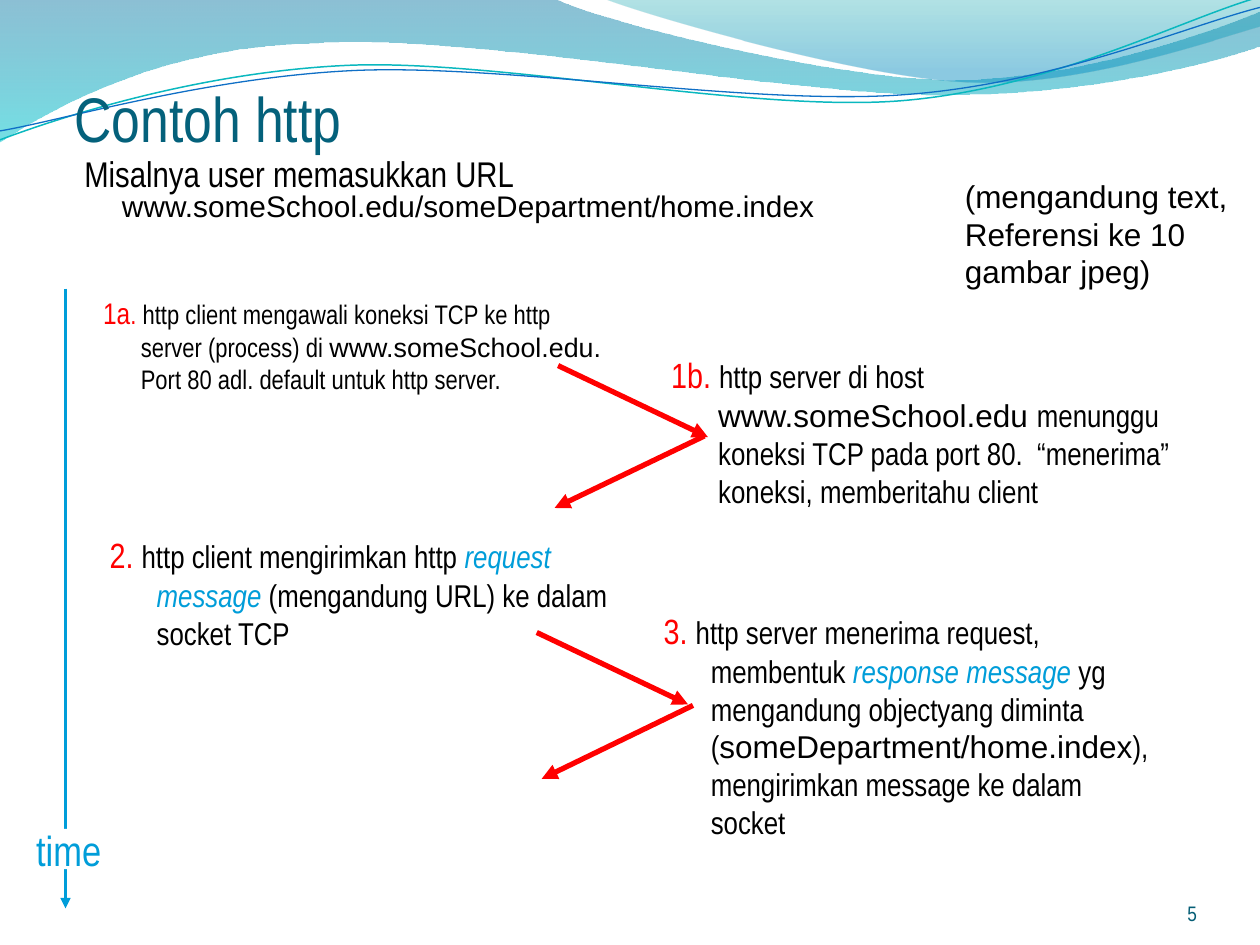
from lxml.etree import SubElement
from pptx import Presentation
from pptx.dml.color import RGBColor
from pptx.enum.shapes import MSO_CONNECTOR, MSO_SHAPE
from pptx.enum.text import MSO_ANCHOR as Anchor, MSO_AUTO_SIZE as AutoSize, PP_ALIGN as Align
from pptx.oxml.ns import qn
from pptx.util import Cm, Pt

NARROW, WIDE = "Arial Narrow", "Arial"
BLACK, RED, BLUE = "000000", "FF0000", "009DD9"
color = RGBColor.from_string

presentation = Presentation()
presentation.slide_width, presentation.slide_height = Cm(25.4), Cm(19.05)
slide = presentation.slides.add_slide(presentation.slide_layouts[6])


def add_text(paragraphs, box, size=18, fill=BLACK, font=NARROW, hanging=0, before=0,
             line=None, align=Align.LEFT, anchor=Anchor.TOP, margins=None, wrap=True):
    """Each paragraph is a list of (text, overrides) runs."""
    frame = slide.shapes.add_textbox(*map(Cm, box)).text_frame
    frame.word_wrap = wrap
    frame.auto_size = AutoSize.NONE if wrap else AutoSize.SHAPE_TO_FIT_TEXT
    frame.vertical_anchor = anchor
    if margins:
        (frame.margin_left, frame.margin_top,
         frame.margin_right, frame.margin_bottom) = map(Cm, margins)
    for index, runs in enumerate(paragraphs):
        paragraph = frame.add_paragraph() if index else frame.paragraphs[0]
        paragraph.alignment = align
        paragraph.space_before = Pt(before)
        paragraph.line_spacing = line
        if hanging:
            properties = paragraph._p.get_or_add_pPr()
            properties.set("marL", str(Cm(hanging)))
            properties.set("indent", str(-Cm(hanging)))
        for text, overrides in runs:
            style = {"size": size, "fill": fill, "font": font, "italic": False} | overrides
            run = paragraph.add_run()
            run.text = text
            run.font.size = Pt(style["size"])
            run.font.name = style["font"]
            run.font.italic = style["italic"]
            run.font.color.rgb = color(style["fill"])


def add_curve(start, segments, closed):
    """A segment is an end point, or two control points and an end point."""
    points = [(Cm(x), Cm(y)) for segment in segments
              for x, y in zip(segment[::2], segment[1::2])]
    builder = slide.shapes.build_freeform(*map(Cm, start))
    builder.add_line_segments(points, close=closed)
    shape = builder.convert_to_shape()
    shape.shadow.inherit = False
    # Join each three line points of a curve into one Bezier segment
    lines = iter(list(shape._element.iter(qn("a:lnTo"))))
    for segment in segments:
        first = next(lines)
        if len(segment) == 6:
            first.tag_name = None
            bezier = SubElement(first.getparent(), qn("a:cubicBezTo"))
            first.addprevious(bezier)
            for part in (first, next(lines), next(lines)):
                bezier.append(part[0])
                part.getparent().remove(part)
    return shape


# Header waves: start, segments, gradient stops (position, colour, opacity %)
waves = [
    ((0, 0), [(11.18, -0.03), (12.09, 0.43, 16.87, 1.6, 19.25, 1.6),
              (21.67, 1.6, 24.33, 0.66, 25.4, 0.23), (25.43, 0.91),
              (24.97, 1.12, 22.1, 1.93, 18.95, 1.91),
              (15.8, 1.91, 9.7, 0.71, 6.53, 0.86),
              (3.28, 0.91, 1.17, 2.11, -0.03, 2.87), (0, 0)],
     [(0, "0074A1", 45), (1, "00C6CF", 55)]),
    ((12.17, -0.03), [(12.93, 0.28, 17.32, 1.57, 19.53, 1.65),
                      (21.74, 1.75, 24.41, 0.81, 25.4, 0.53), (25.4, 0), (12.17, -0.03)],
     [(0, "00A1A9", 30), (0.8, "008BBF", 45)]),
]
for start, segments, stops in waves:
    wave = add_curve(start, segments, True)
    wave.line.fill.background()
    wave.fill.gradient()
    wave.fill.gradient_angle = 270
    for stop, (position, tint, opacity) in zip(wave.fill.gradient_stops, stops):
        stop.position = position
        stop.color.rgb = color(tint)
    tints = wave._element.spPr.iter(qn("a:srgbClr"))
    for element, (position, tint, opacity) in zip(list(tints), stops):
        SubElement(element, qn("a:alpha")).set("val", str(opacity * 1000))

# Thin header lines, slightly tilted
strands = [
    ((-0.05, 2.22), [(1.19, 1.82, 4.02, 1.04, 7.05, 1.05), (10.05, 1.07, 15.02, 2.37, 18.08, 2.29),
                     (21.14, 2.2, 23.87, 0.91, 25.41, 0.55)], "0AB8BF", 0.85),
    ((-0.04, 2.04), [(1.16, 1.9, 4.18, 1.15, 7.2, 1.16), (10.25, 1.18, 15.13, 2.25, 18.18, 2.17),
                     (21.21, 2.1, 23.93, 1.06, 25.45, 0.75)], "0F6FC6", 0.75),
]
for start, segments, tint, width in strands:
    strand = add_curve(start, segments, False)
    strand.rotation = 357.3
    strand.fill.background()
    strand.line.color.rgb = color(tint)
    strand.line.width = Pt(width)

# Title, URL and slide number
add_text([[("Contoh http", {})]], (1.5, 0.71, 21.59, 2.41), size=36, fill="04617B",
         anchor=Anchor.BOTTOM, margins=(0, 0.13, 0, 0))
add_text([[("Misalnya user memasukkan URL ", {}),
           ("www.someSchool.edu/someDepartment/home.index", {"size": 17, "font": WIDE})]],
         (1.45, 3.1, 23.16, 1.3), size=20.4, hanging=0.76, before=4, line=0.8)
add_text([[("5", {})]], (22.02, 17.65, 2.11, 1.02), size=12, fill="045D75",
         align=Align.RIGHT, anchor=Anchor.BOTTOM, margins=(0, 0, 0, 0))

# Steps of the exchange
number = {"size": 20, "fill": RED}
term = {"fill": BLUE, "italic": True}
wide = {"font": WIDE}
add_text([[("1a", {"size": 17, "fill": RED}), (".", {"fill": RED}),
           (" http client mengawali koneksi TCP ke http server (process) di ", {}),
           ("www.someSchool.edu.", wide),
           (" Port 80 adl. default untuk http server.", {})]],
         (1.83, 5.82, 10.59, 5.28), size=15.3, hanging=0.76, before=3)
steps = [
    ((1.96, 10.64, 10.59, 3), [
        ("2. ", number), ("http client mengirimkan http ", {}), ("request message", term),
        (" (mengandung URL) ke dalam socket TCP", {})]),
    ((13.28, 7.01, 10.59, 4.19), [
        ("1b. ", number), ("http server di host ", {}), ("www.someSchool.edu ", wide),
        ("menunggu koneksi TCP pada port 80.  “menerima” koneksi, memberitahu client", {})]),
    ((13.13, 12.17, 10.59, 5), [
        ("3. ", number), ("http server menerima request, membentuk ", {}),
        ("response message", term), (" yg mengandung objectyang diminta (", {}),
        ("someDepartment/home.index", wide),
        ("), mengirimkan message ke dalam socket", {})]),
]
for box, runs in steps:
    add_text([runs], box, hanging=0.95, before=4)

# Time axis and message arrows
arrows = [
    (1.32, 5.82, 1.32, 18.31, BLUE, 1.5),
    (11.25, 7.37, 14.27, 8.81, RED, 3),
    (14.2, 8.79, 11.18, 10.24, RED, 3),
    (10.82, 12.75, 13.87, 14.2, RED, 3),
    (13.97, 14.22, 10.92, 15.7, RED, 3),
]
for *ends, tint, width in arrows:
    arrow = slide.shapes.add_connector(MSO_CONNECTOR.STRAIGHT, *map(Cm, ends))
    arrow.line.color.rgb = color(tint)
    arrow.line.width = Pt(width)
    SubElement(arrow.line._get_or_add_ln(), qn("a:tailEnd")).set("type", "triangle")
    SubElement(arrow._element.spPr, qn("a:effectLst"))

# Axis label on a white patch
patch = slide.shapes.add_shape(MSO_SHAPE.RECTANGLE, Cm(0.66), Cm(16.71), Cm(1.83), Cm(0.81))
patch.shadow.inherit = False
patch.fill.solid()
patch.fill.fore_color.rgb = color("FFFFFF")
patch.line.fill.background()
add_text([[("time", {})]], (0.48, 16.5, 2.26, 1.27), size=24, fill=BLUE, wrap=False)

# Note on the page content
note = ["(mengandung text,", "Referensi ke 10", "gambar jpeg)"]
add_text([[(text, {})] for text in note], (19.2, 3.44, 5.97, 2.54), font=WIDE, wrap=False)

presentation.save("out.pptx")
